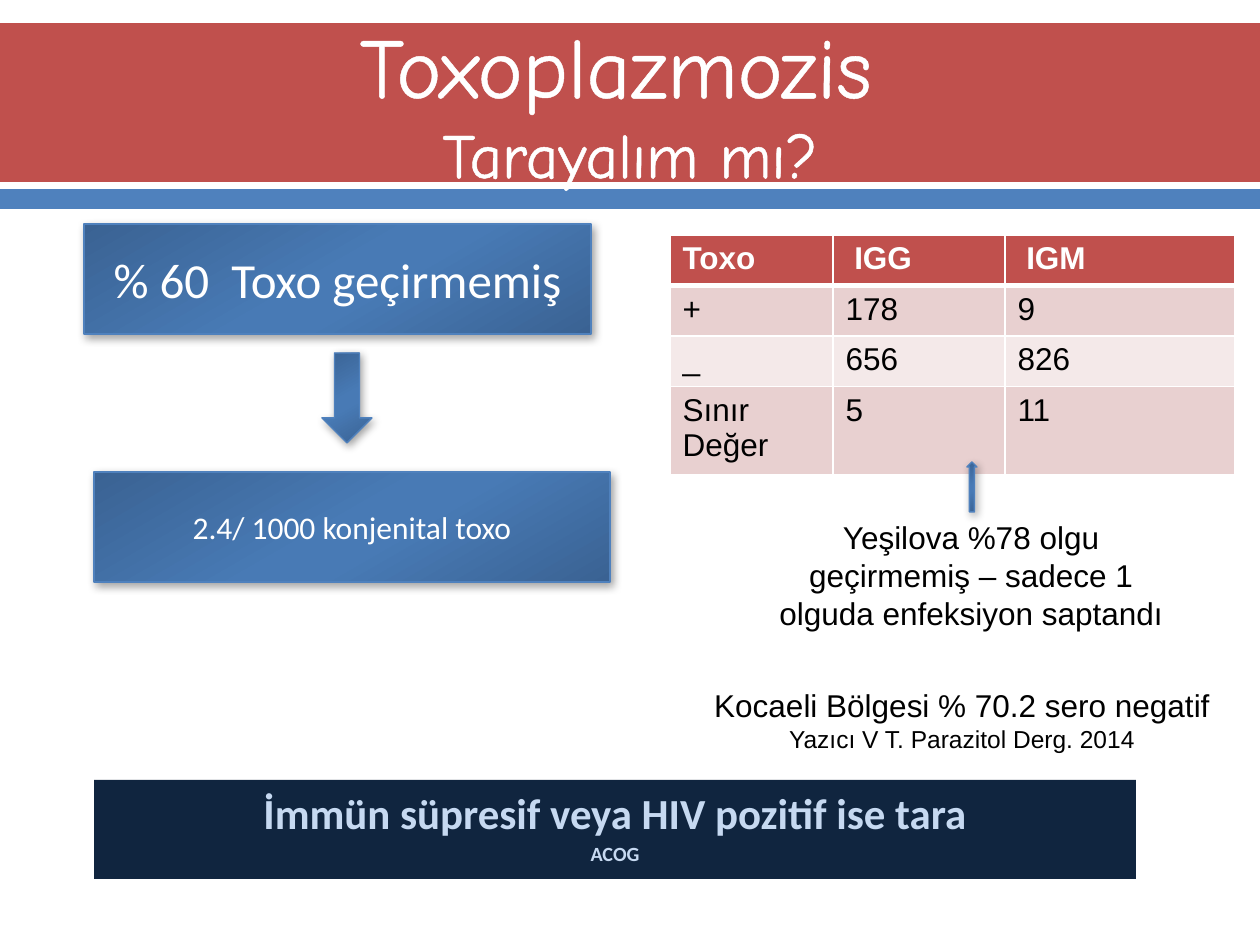
from lxml.etree import SubElement
from pptx import Presentation
from pptx.dml.color import RGBColor
from pptx.enum.shapes import MSO_SHAPE
from pptx.enum.text import MSO_ANCHOR, PP_ALIGN
from pptx.oxml import parse_xml
from pptx.oxml.ns import nsdecls, qn
from pptx.util import Emu, Pt

EMU_PER_PX = 914400 / 126
WHITE = RGBColor(0xFF, 0xFF, 0xFF)
BLACK = RGBColor(0x00, 0x00, 0x00)
RED = RGBColor(0xC0, 0x50, 0x4D)
BLUE = RGBColor(0x4F, 0x81, 0xBD)
NAVY = RGBColor(0x10, 0x25, 0x3F)
PALE_BLUE = RGBColor(0xC6, 0xD9, 0xF1)
ROSE = RGBColor(0xE8, 0xD0, 0xD0)
PALE_ROSE = RGBColor(0xF4, 0xE9, 0xE9)
GRADIENT_DARK = RGBColor(0x3A, 0x62, 0x93)
GRADIENT_LIGHT = RGBColor(0x48, 0x7A, 0xB5)
GRADIENT_STOPS = [(0, GRADIENT_DARK), (48, GRADIENT_LIGHT), (58, GRADIENT_LIGHT), (100, GRADIENT_DARK)]


def px(*lengths):
    return [Emu(round(length * EMU_PER_PX)) for length in lengths]


def write_run(paragraph, text, size, font="Arial", color=BLACK, bold=False, outline=None):
    run = paragraph.add_run()
    run.text = text
    run.font.name = font
    run.font.size = Pt(size)
    run.font.bold = bold
    run.font.color.rgb = color
    if outline:
        run.font._element.insert(0, parse_xml(
            f'<a:ln {nsdecls("a")} w="{Pt(outline)}"><a:solidFill>'
            f'<a:srgbClr val="{color}"/></a:solidFill></a:ln>'))


def write_lines(frame, lines, anchor=MSO_ANCHOR.TOP, gap=0, **text_format):
    frame.word_wrap = True
    frame.vertical_anchor = anchor
    for index, (text, size) in enumerate(lines):
        paragraph = frame.add_paragraph() if index else frame.paragraphs[0]
        paragraph.alignment = PP_ALIGN.CENTER
        paragraph.space_before = Pt(gap)
        write_run(paragraph, text, size, **text_format)


def add_block(slide, box, color):
    shape = slide.shapes.add_shape(MSO_SHAPE.RECTANGLE, *px(*box))
    shape.shadow.inherit = False
    shape.fill.solid()
    shape.fill.fore_color.rgb = color
    shape.line.fill.background()
    return shape


def add_glossy_shape(slide, kind, box):
    shape = slide.shapes.add_shape(kind, *px(*box))
    shape.line.color.rgb = BLUE
    shape.line.width = Pt(0.79)
    stops = "".join(
        f'<a:gs pos="{position * 1000}"><a:srgbClr val="{color}"/></a:gs>'
        for position, color in GRADIENT_STOPS)
    gradient = parse_xml(
        f'<a:gradFill {nsdecls("a")} rotWithShape="1"><a:gsLst>{stops}</a:gsLst>'
        '<a:lin ang="3600000" scaled="0"/></a:gradFill>')
    shadow = parse_xml(
        f'<a:effectLst {nsdecls("a")}><a:outerShdw blurRad="{Pt(5)}" dist="{Pt(2)}" dir="3600000" '
        'rotWithShape="0"><a:srgbClr val="000000"><a:alpha val="36000"/></a:srgbClr>'
        '</a:outerShdw></a:effectLst>')
    properties = shape._element.spPr
    properties.find(qn("a:prstGeom")).addnext(gradient)
    properties.append(shadow)
    return shape


def add_text(slide, box, lines, **text_format):
    text_box = slide.shapes.add_textbox(*px(*box))
    write_lines(text_box.text_frame, lines, **text_format)


def add_header(slide, box):
    left, top, width, height = box
    add_block(slide, (left, top, width, 159), RED)
    add_block(slide, (left, top + height - 20, width, 20), BLUE)
    text_box = slide.shapes.add_textbox(*px(left + 63, top + 2, width - 126, 154))
    frame = text_box.text_frame
    frame.word_wrap = True
    frame.vertical_anchor = MSO_ANCHOR.MIDDLE
    paragraph = frame.paragraphs[0]
    paragraph.alignment = PP_ALIGN.CENTER
    title_format = {"font": "Comic Neue", "color": WHITE, "outline": 1.1}
    write_run(paragraph, "Toxoplazmozis ", 48.6, **title_format)
    paragraph.add_line_break()
    write_run(paragraph, "Tarayalım mı?", 36, **title_format)


def add_risk_flow(slide, box):
    left, top, width, height = box
    label_format = {"anchor": MSO_ANCHOR.MIDDLE, "font": "Calibri", "color": WHITE}
    susceptible = add_glossy_shape(slide, MSO_SHAPE.RECTANGLE, (left, top, 507, 110))
    write_lines(susceptible.text_frame, [("% 60  Toxo geçirmemiş", 28)], **label_format)
    add_glossy_shape(slide, MSO_SHAPE.DOWN_ARROW, (left + 238, top + 129, 50, 90))
    congenital = add_glossy_shape(
        slide, MSO_SHAPE.RECTANGLE, (left + 10, top + height - 110, width - 10, 110))
    write_lines(congenital.text_frame, [("2.4/ 1000 konjenital toxo", 18)], **label_format)


def set_borders(cell, bottom_width):
    properties = cell._tc.get_or_add_tcPr()
    fill = properties.find(qn("a:solidFill"))
    for side, width in (("L", 1), ("R", 1), ("T", 1), ("B", bottom_width)):
        line = SubElement(properties, qn(f"a:ln{side}"), w=str(Pt(width)))
        color = SubElement(SubElement(line, qn("a:solidFill")), qn("a:srgbClr"))
        color.set("val", str(WHITE))
        fill.addprevious(line)


def add_result_table(slide, box):
    rows = [
        ("Toxo", " IGG", " IGM"),
        ("+", "178", "9"),
        ("_", "656", "826"),
        ("Sınır Değer", "5", "11"),
    ]
    table = slide.shapes.add_table(len(rows), 3, *px(*box)).table
    for column, width in zip(table.columns, px(163, 172, 230)):
        column.width = width
    for row, height in zip(table.rows, px(50, 50, 50, 88)):
        row.height = height
    for row_index, texts in enumerate(rows):
        header = row_index == 0
        fill = RED if header else ROSE if row_index % 2 else PALE_ROSE
        for column_index, text in enumerate(texts):
            cell = table.cell(row_index, column_index)
            cell.fill.solid()
            cell.fill.fore_color.rgb = fill
            set_borders(cell, 3 if header else 1)
            write_run(cell.text_frame.paragraphs[0], text, 18,
                      color=WHITE if header else BLACK, bold=header)


def add_findings(slide, box):
    left, top, width, height = box
    add_text(slide, (left + 59, top + 50, 446, 127),
             [("Yeşilova %78 olgu geçirmemiş – sadece 1 olguda enfeksiyon saptandı", 18)])
    add_glossy_shape(slide, MSO_SHAPE.UP_ARROW, (left + 278, top, 10, 50))
    region = (left, top + height - 81, width, 81)
    text_box = slide.shapes.add_textbox(*px(*region))
    write_lines(text_box.text_frame, [
        ("Kocaeli Bölgesi % 70.2 sero negatif", 18),
        ("Yazıcı V T. Parazitol Derg. 2014", 14),
    ])


def add_recommendation(slide, box):
    banner = add_block(slide, box, NAVY)
    write_lines(banner.text_frame, [
        ("İmmün süpresif veya HIV pozitif ise tara", 24.5),
        ("ACOG", 11.5),
    ], gap=2, font="Calibri", color=PALE_BLUE, bold=True)


def main():
    presentation = Presentation()
    presentation.slide_width, presentation.slide_height = px(1260, 945)
    slide = presentation.slides.add_slide(presentation.slide_layouts[6])
    add_header(slide, (0, 23, 1260, 186))
    add_result_table(slide, (670, 235, 565, 238))
    add_recommendation(slide, (94, 780, 1042, 99))
    add_risk_flow(slide, (84, 224, 526, 358))
    add_findings(slide, (689, 462, 546, 299))
    presentation.save("out.pptx")


if __name__ == "__main__":
    main()
